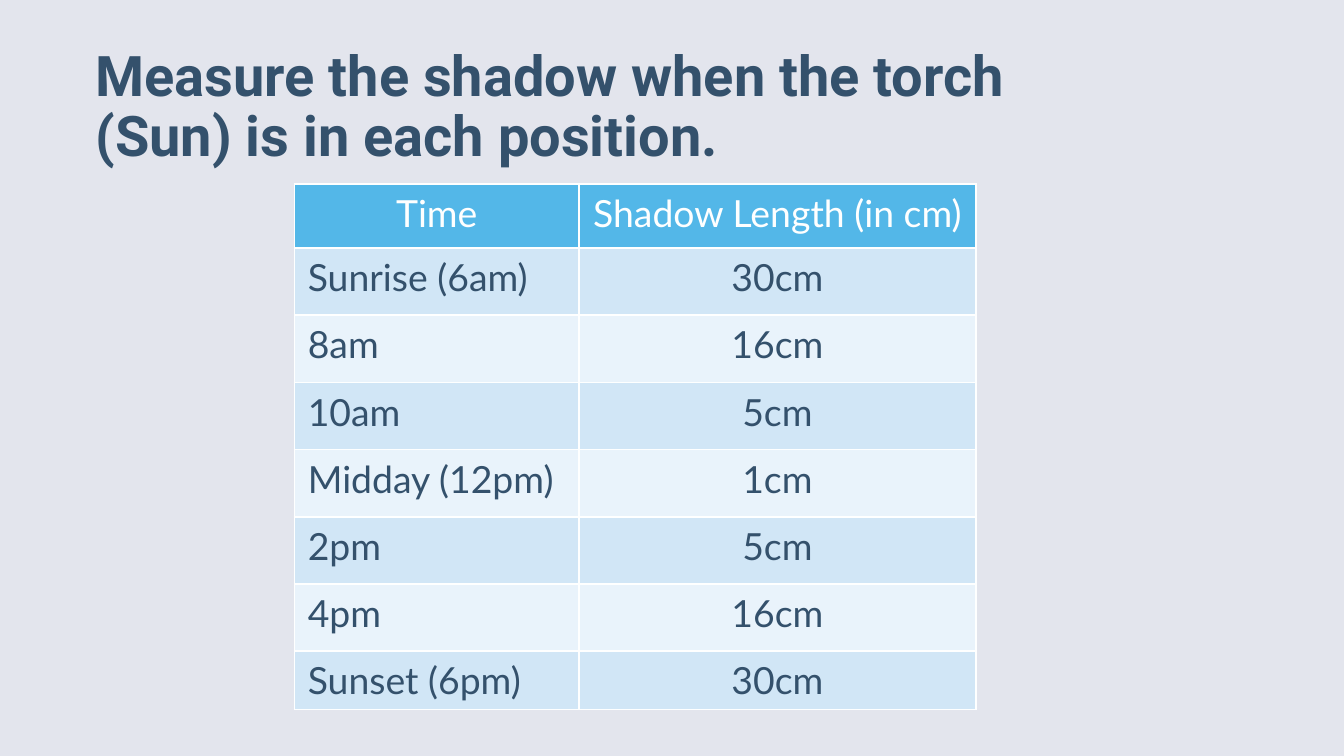
from lxml import etree
from pptx import Presentation
from pptx import util as u
from pptx.dml.color import RGBColor
from pptx.enum import text
from pptx.oxml import ns

PX = 4572  # EMU per px, 200 px to the inch
C = {"bg": "E3E5ED", "ink": "34516C", "white": "FEFFFF",
     "head": "53B7E8", "odd": "D1E6F6", "even": "E9F3FB"}


def add_run(p, words, font, size, color, bold=False):
    r = p.add_run()
    r.text = words
    r.font.name, r.font.size, r.font.bold = font, u.Pt(size), bold
    r.font.color.rgb = RGBColor.from_string(C[color])


def add_borders(cell, color):
    tcPr = cell._tc.get_or_add_tcPr()
    for i, side in enumerate("LRTB"):
        ln = etree.Element(ns.qn(f"a:ln{side}"), w=str(u.Pt(1)))
        fill = etree.SubElement(ln, ns.qn("a:solidFill"))
        etree.SubElement(fill, ns.qn("a:srgbClr"), val=C[color])
        tcPr.insert(i, ln)


prs = Presentation()
prs.slide_width, prs.slide_height = 2000 * PX, 1125 * PX
s = prs.slides.add_slide(prs.slide_layouts[5])
s.background.fill.solid()
s.background.fill.fore_color.rgb = RGBColor.from_string(C["bg"])

# Title
title = s.shapes.title
title.left, title.top, title.width, title.height = [v * PX for v in (142, 111, 1396, 140)]
tf = title.text_frame
tf.word_wrap = True
tf.auto_size = text.MSO_AUTO_SIZE.NONE
tf.vertical_anchor = text.MSO_ANCHOR.BOTTOM
tf.margin_left = tf.margin_right = tf.margin_top = tf.margin_bottom = 0
p = tf.paragraphs[0]
p.alignment = text.PP_ALIGN.LEFT
p.line_spacing = 0.9
add_run(p, "Measure the shadow when the torch (Sun) is in each position.",
        "Roboto", 30, "ink", True)

# Table of shadow lengths
rows = [("Time", "Shadow Length (in cm)"),
        ("Sunrise (6am)", "30cm"), ("8am", "16cm"), ("10am", "5cm"),
        ("Midday (12pm)", "1cm"), ("2pm", "5cm"), ("4pm", "16cm"),
        ("Sunset (6pm)", "30cm")]
widths = [424, 590]
heights = [95] + [100] * 6 + [86]
table = s.shapes.add_table(len(rows), len(widths), 438 * PX, 274 * PX,
                           sum(widths) * PX, sum(heights) * PX).table
for column, width in zip(table.columns, widths):
    column.width = width * PX
for i, (row, height) in enumerate(zip(rows, heights)):
    table.rows[i].height = height * PX
    band = "head" if i == 0 else "odd" if i % 2 else "even"
    for j, words in enumerate(row):
        cell = table.cell(i, j)
        cell.fill.solid()
        cell.fill.fore_color.rgb = RGBColor.from_string(C[band])
        add_borders(cell, "white")
        p = cell.text_frame.paragraphs[0]
        centred = i == 0 or j == 1
        p.alignment = text.PP_ALIGN.CENTER if centred else text.PP_ALIGN.LEFT
        add_run(p, words, "Lato", 20, "ink" if i else "white")

prs.save("out.pptx")
